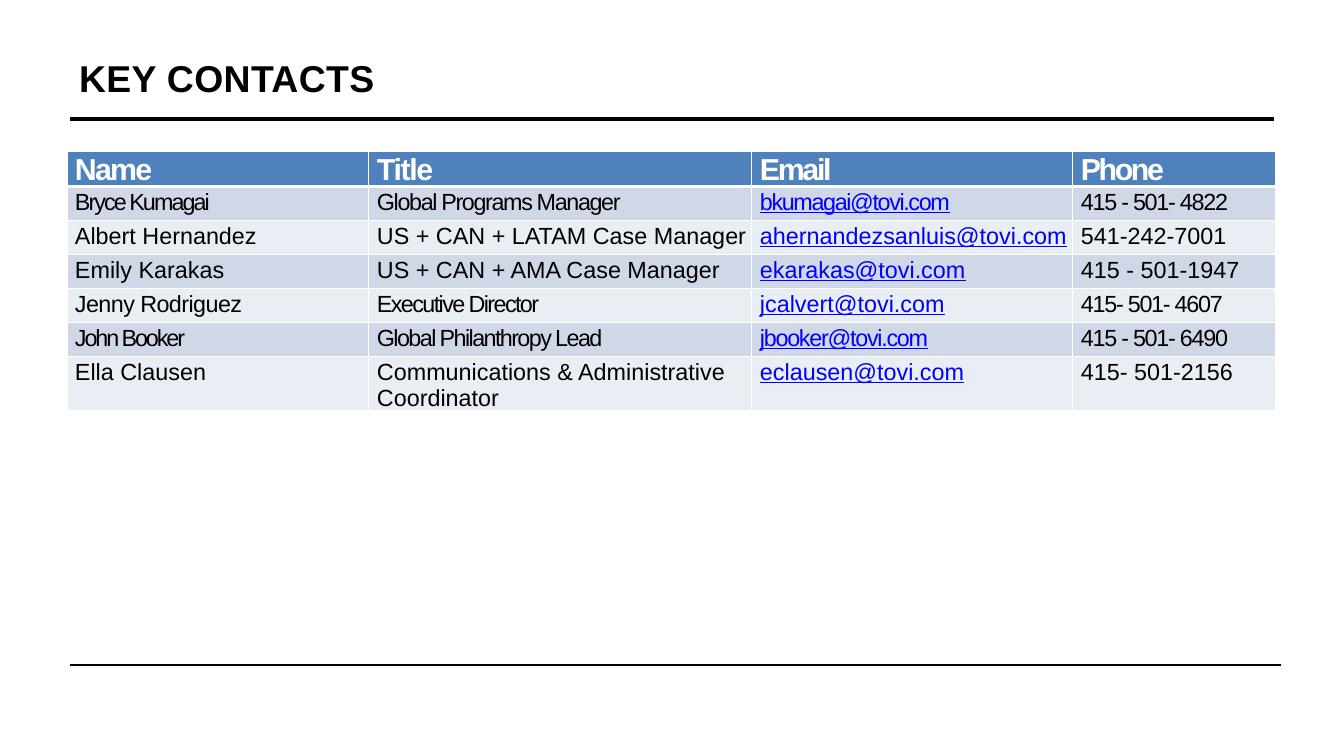
"""Build the key contacts slide."""
from lxml import etree
from pptx import Presentation, util as u
from pptx.dml.color import RGBColor
from pptx.enum import shapes, text
from pptx.oxml import ns

EMU_PER_PX = 914400 / 84
COLORS = {
    "ink": "000000",
    "white": "FFFFFF",
    "header": "4F81BD",
    "odd": "D0D8E8",
    "even": "E9EDF4",
    "email": "0000FF",
}
COLUMN_WIDTHS = [302, 383, 321, 203]
ROW_HEIGHT = 34
EMAIL_COLUMN = 2
HEADINGS = [("Name", -1.6), ("Title", -1.2), ("Email", -2), ("Phone", -2.1)]
CONTACTS = [
    [("Bryce Kumagai", -1.7), ("Global Programs Manager", -1.2),
     ("bkumagai@tovi.com", -1.2), ("415 - 501- 4822", -1.1)],
    [("Albert Hernandez", 0), ("US + CAN + LATAM Case Manager", 0),
     ("ahernandezsanluis@tovi.com", 0), ("541-242-7001", 0)],
    [("Emily Karakas", 0), ("US + CAN + AMA Case Manager", 0),
     ("ekarakas@tovi.com", 0), ("415 - 501-1947", 0)],
    [("Jenny Rodriguez", -0.5), ("Executive Director", -1.4),
     ("jcalvert@tovi.com", 0), ("415- 501- 4607", -1.1)],
    [("John Booker", -1.8), ("Global Philanthropy Lead", -1.4),
     ("jbooker@tovi.com", -1.1), ("415 - 501- 6490", -1.1)],
    [("Ella Clausen", 0), ("Communications & Administrative Coordinator", 0),
     ("eclausen@tovi.com", 0), ("415- 501-2156", 0)],
]


def px(length):
    return u.Emu(round(length * EMU_PER_PX))


def rgb(name):
    return RGBColor.from_string(COLORS[name])


def write(frame, words, *, size, color="ink", bold=False, underline=False, spacing=0):
    paragraph = frame.paragraphs[0]
    paragraph.alignment = text.PP_ALIGN.LEFT
    run = paragraph.add_run()
    run.text = words
    font = run.font
    font.name = "Arial"
    font.size = u.Pt(size)
    font.bold = bold
    font.underline = underline
    font.color.rgb = rgb(color)
    run._r.get_or_add_rPr().set("spc", str(round(spacing * 100)))


def add_rule(slide, left, right, y, weight):
    rule = slide.shapes.add_connector(
        shapes.MSO_CONNECTOR.STRAIGHT, px(left), px(y), px(right), px(y))
    rule.line.color.rgb = rgb("ink")
    rule.line.width = u.Pt(weight)
    etree.SubElement(rule._element.spPr, ns.qn("a:effectLst"))


def add_title(slide, words):
    title = slide.shapes.title
    title.left, title.top, title.width, title.height = map(px, (67, 30, 1210, 96))
    frame = title.text_frame
    frame.word_wrap = True
    frame.vertical_anchor = text.MSO_ANCHOR.MIDDLE
    frame.margin_left = frame.margin_right = px(12)
    frame.margin_top = frame.margin_bottom = px(6)
    write(frame, words, size=32, bold=True, spacing=0.3)


def add_borders(cell, top, bottom):
    properties = cell._tc.get_or_add_tcPr()
    for side, weight in (("L", 1), ("R", 1), ("T", top), ("B", bottom)):
        border = etree.SubElement(
            properties, ns.qn(f"a:ln{side}"), w=str(u.Pt(weight)))
        fill = etree.SubElement(border, ns.qn("a:solidFill"))
        etree.SubElement(fill, ns.qn("a:srgbClr"), val=COLORS["white"])


def format_cell(cell, fill, top=1, bottom=1):
    add_borders(cell, top, bottom)
    cell.fill.solid()
    cell.fill.fore_color.rgb = rgb(fill)
    cell.vertical_anchor = text.MSO_ANCHOR.TOP
    cell.margin_left = px(8)
    cell.margin_top = px(2)
    cell.margin_right = cell.margin_bottom = 0


def add_contacts(slide):
    row_count = len(CONTACTS) + 1
    contacts = slide.shapes.add_table(
        row_count, len(HEADINGS), px(67), px(151),
        px(sum(COLUMN_WIDTHS)), px(ROW_HEIGHT * row_count)).table
    contacts.horz_banding = False
    for column, width in zip(contacts.columns, COLUMN_WIDTHS):
        column.width = px(width)
    for row in contacts.rows:
        row.height = px(ROW_HEIGHT)
    for index, (heading, spacing) in enumerate(HEADINGS):
        cell = contacts.cell(0, index)
        format_cell(cell, "header", bottom=3)
        write(cell.text_frame, heading, size=26, color="white", bold=True,
              spacing=spacing)
    for number, contact in enumerate(CONTACTS, 1):
        for index, (detail, spacing) in enumerate(contact):
            cell = contacts.cell(number, index)
            is_email = index == EMAIL_COLUMN
            format_cell(cell, "odd" if number % 2 else "even",
                        top=3 if number == 1 else 1)
            write(cell.text_frame, detail, size=20, spacing=spacing,
                  color="email" if is_email else "ink", underline=is_email)


def main():
    deck = Presentation()
    deck.slide_width, deck.slide_height = u.Inches(16), u.Inches(9)
    slide = deck.slides.add_slide(deck.slide_layouts.get_by_name("Title Only"))
    add_rule(slide, 70, 1274, 119, 3.25)
    add_rule(slide, 70, 1281, 665, 1.75)
    add_title(slide, "KEY CONTACTS")
    add_contacts(slide)
    deck.save("out.pptx")


if __name__ == "__main__":
    main()
